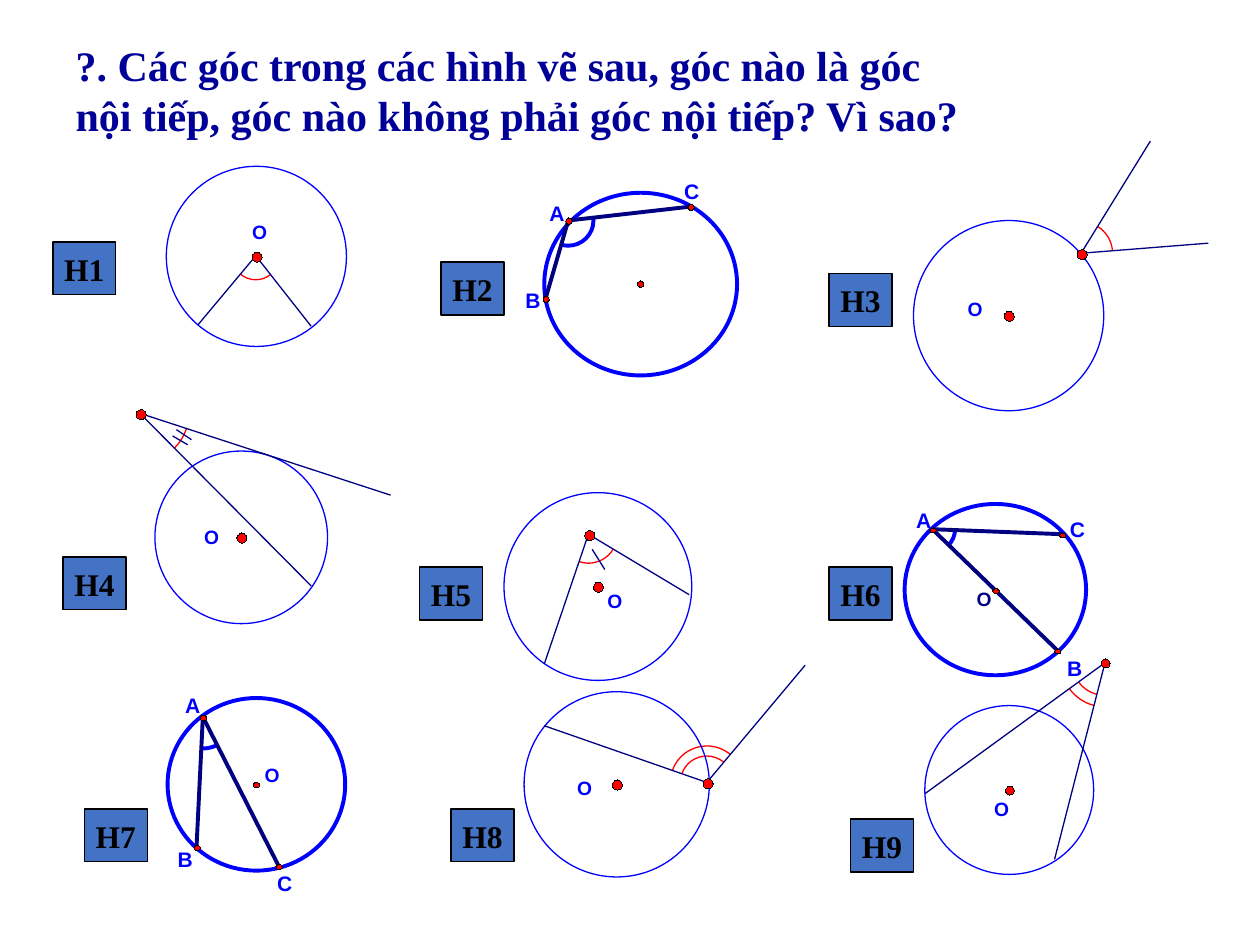
import math

from pptx import Presentation
from pptx import util as u
from pptx.dml.color import RGBColor
from pptx.enum import shapes, text
from pptx.oxml.ns import qn
from lxml import etree

PX = 9144
BLUE = RGBColor(0x00, 0x00, 0xFF)
NAVY = RGBColor(0x00, 0x00, 0x80)
TITLE_BLUE = RGBColor(0x00, 0x00, 0x99)
TAG_BLUE = RGBColor(0x44, 0x72, 0xC4)
RED = RGBColor(0xFF, 0x00, 0x00)
BLACK = RGBColor(0x00, 0x00, 0x00)
HAIRLINE = u.Emu(1)
THIN = u.Pt(0.75)
THICK = u.Pt(2.25)

TITLE = ("?. Các góc trong các hình vẽ sau, góc nào là góc\n"
         "nội tiếp, góc nào không phải góc nội tiếp? Vì sao?")

FIGURES = [
    dict(name="H1", tag=(42, 192), box=(132, 132, 143, 143), vertex=(71, 71),
         ends=[(25, 126), (115, 127)], radii=[19], labels={"O": (68, 43)}),
    dict(name="H2", tag=(350, 208), box=(432, 153, 153, 145), vertex=(19, 22),
         ends=[(1, 84), (116, 11)], radii=[20], bold=True, dot=(5, 5),
         labels={"A": (4, 6), "B": (-15, 75), "C": (111, -11)}),
    dict(name="H3", tag=(658, 217), box=(725, 175, 151, 151), vertex=(133, 26),
         ends=[(234, 18), (188, -63)], radii=[25], labels={"O": (43, 61)}),
    dict(name="H4", tag=(50, 442), box=(123, 358, 137, 137), vertex=(-12, -30),
         ends=[(124, 107), (187, 35)], radii=[39], labels={"O": (39, 59)},
         ticks=[((14, -12), (26, -5)), ((17, -17), (29, -9))]),
    dict(name="H5", tag=(333, 450), box=(400, 391, 149, 149), vertex=(67, 33),
         ends=[(147, 81), (32, 136)], radii=[23], labels={"O": (82, 77)},
         ticks=[((70, 45), (80, 61))]),
    dict(name="H6", tag=(658, 450), box=(718, 400, 144, 136), vertex=(22, 20),
         ends=[(121, 116), (125, 24)], radii=[18], bold=True, dot=(5, 4),
         center_color=NAVY,
         labels={"O": (57, 66), "A": (9, 3), "B": (129, 120), "C": (131, 10)}),
    dict(name="H7", tag=(67, 642), box=(133, 554, 141, 137), vertex=(28, 15),
         ends=[(23, 118), (88, 133)], radii=[25], bold=True, dot=(5, 4),
         labels={"O": (77, 52), "A": (14, -4), "B": (8, 118), "C": (87, 137)}),
    dict(name="H8", tag=(358, 642), box=(416, 549, 147, 147), vertex=(145, 72),
         ends=[(223, -21), (16, 27)], radii=[29, 21], labels={"O": (42, 67)}),
    dict(name="H9", tag=(675, 650), box=(734, 560, 134, 134), vertex=(143, -34),
         ends=[(0, 70), (103, 122)], radii=[35, 26], dot=(7, 7),
         labels={"O": (55, 73)}),
]


def emu(*lengths):
    return [u.Emu(round(n * PX)) for n in lengths]


def style_line(sp, color, width):
    sp.line.color.rgb = color
    sp.line.width = width


def style_text(tf, font, size, color, align):
    for p in tf.paragraphs:
        p.alignment = align
        for r in p.runs:
            r.font.name = font
            r.font.size = u.Pt(size)
            r.font.bold = True
            r.font.color.rgb = color


def add_preset(parent, kind, box, fill, color, width):
    sp = parent.add_shape(kind, *emu(*box))
    sp.shadow.inherit = False
    if fill is None:
        sp.fill.background()
    else:
        sp.fill.solid()
        sp.fill.fore_color.rgb = fill
    style_line(sp, color, width)
    return sp


def add_segment(parent, start, end, width):
    line = parent.add_connector(shapes.MSO_CONNECTOR.STRAIGHT, *emu(*start, *end))
    style_line(line, NAVY, width)
    etree.SubElement(line._element.spPr, qn("a:effectLst"))


def arc_curves(vertex, ends, radius):
    vx, vy = vertex
    first, last = [math.atan2(y - vy, x - vx) for x, y in ends]
    sweep = (last - first + math.pi) % math.tau - math.pi
    if sweep < 0:
        first, sweep = last, -sweep
    quarter = math.pi / 2
    stops = [first]
    while (turn := (math.floor(stops[-1] / quarter + 1e-9) + 1) * quarter) < first + sweep:
        stops.append(turn)
    stops.append(first + sweep)

    def on_arc(angle, pull=0):
        c, d = math.cos(angle), math.sin(angle)
        return emu(vx + radius * (c - pull * d), vy + radius * (d + pull * c))

    curves = []
    for a, b in zip(stops, stops[1:]):
        pull = 4 / 3 * math.tan((b - a) / 4)
        curves.append([on_arc(a, pull), on_arc(b, -pull), on_arc(b)])
    return on_arc(first), curves


def add_arc(parent, vertex, ends, radius, color, width):
    start, curves = arc_curves(vertex, ends, radius)
    center = emu(*vertex)
    builder = parent.build_freeform(*start)
    builder.add_line_segments([curve[-1] for curve in curves] + [center])
    sp = builder.convert_to_shape()
    sp.shadow.inherit = False
    sp.fill.background()
    style_line(sp, color, width)
    corners = [start, center] + [curve[-1] for curve in curves]
    left, top = [min(axis) for axis in zip(*corners)]
    paths = sp._element.spPr.find(".//" + qn("a:pathLst"))
    size = dict(paths[0].attrib)
    paths.remove(paths[0])
    steps = [("a:moveTo", [start])] + [("a:cubicBezTo", curve) for curve in curves]
    for extra, flag in (([], "fill"), ([("a:lnTo", [center]), ("a:close", [])], "stroke")):
        path = etree.SubElement(paths, qn("a:path"), w=size["w"], h=size["h"])
        path.set(flag, "none" if flag == "fill" else "0")
        for tag, points in steps + extra:
            step = etree.SubElement(path, qn(tag))
            for x, y in points:
                etree.SubElement(step, qn("a:pt"), x=str(x - left), y=str(y - top))


def add_label(parent, letter, left, top, color):
    sp = parent.add_textbox(*emu(left, top, 12, 19))
    tf = sp.text_frame
    tf.margin_left = tf.margin_right = tf.margin_top = tf.margin_bottom = 0
    tf.word_wrap = False
    tf.auto_size = text.MSO_AUTO_SIZE.SHAPE_TO_FIT_TEXT
    tf.text = letter
    style_text(tf, "Arial", 11 if letter == "O" else 12, color, text.PP_ALIGN.LEFT)


def add_figure(s, box, vertex, ends, radii, labels, ticks=(), bold=False,
               dot=(8, 8), center_color=BLUE):
    left, top, width, height = box
    group = s.shapes.add_group_shape().shapes
    weight = THICK if bold else THIN

    def at(point):
        return left + point[0], top + point[1]

    corner = at(vertex)
    tips = [at(end) for end in ends]
    for radius in radii:
        add_arc(group, corner, tips, radius, BLUE if bold else RED, weight)
    add_preset(group, shapes.MSO_SHAPE.OVAL, box, None, BLUE, weight)
    for tip in tips:
        add_segment(group, corner, tip, weight)
    for start, end in ticks:
        add_segment(group, at(start), at(end), weight)

    dot_w, dot_h = dot
    center = at((width // 2, height // 2))
    for x, y in dict.fromkeys([center, corner] + (tips if bold else [])):
        add_preset(group, shapes.MSO_SHAPE.OVAL,
                   (x - (dot_w - 1) // 2, y - (dot_h - 1) // 2, dot_w, dot_h),
                   RED, BLACK, HAIRLINE)
    for letter, point in labels.items():
        add_label(group, letter, *at(point), center_color if letter == "O" else BLUE)


def add_tag(s, name, left, top):
    sp = add_preset(s.shapes, shapes.MSO_SHAPE.RECTANGLE, (left, top, 50, 42),
                    TAG_BLUE, BLACK, THIN)
    tf = sp.text_frame
    tf.word_wrap = False
    tf.vertical_anchor = text.MSO_ANCHOR.MIDDLE
    tf.text = name
    style_text(tf, "Times New Roman", 18, BLACK, text.PP_ALIGN.CENTER)


def add_title(s, box):
    sp = s.shapes.title
    sp.left, sp.top, sp.width, sp.height = emu(*box)
    tf = sp.text_frame
    tf.word_wrap = False
    tf.auto_size = text.MSO_AUTO_SIZE.NONE
    tf.vertical_anchor = text.MSO_ANCHOR.MIDDLE
    tf.text = TITLE
    style_text(tf, "Times New Roman", 24, TITLE_BLUE, text.PP_ALIGN.LEFT)


def main():
    prs = Presentation()
    prs.slide_width, prs.slide_height = emu(1000, 750)
    s = prs.slides.add_slide(prs.slide_layouts[5])
    add_title(s, (50, 25, 792, 92))
    for figure in FIGURES:
        parts = dict(figure)
        name, tag = parts.pop("name"), parts.pop("tag")
        add_figure(s, **parts)
        add_tag(s, name, *tag)
    prs.save("out.pptx")


if __name__ == "__main__":
    main()
